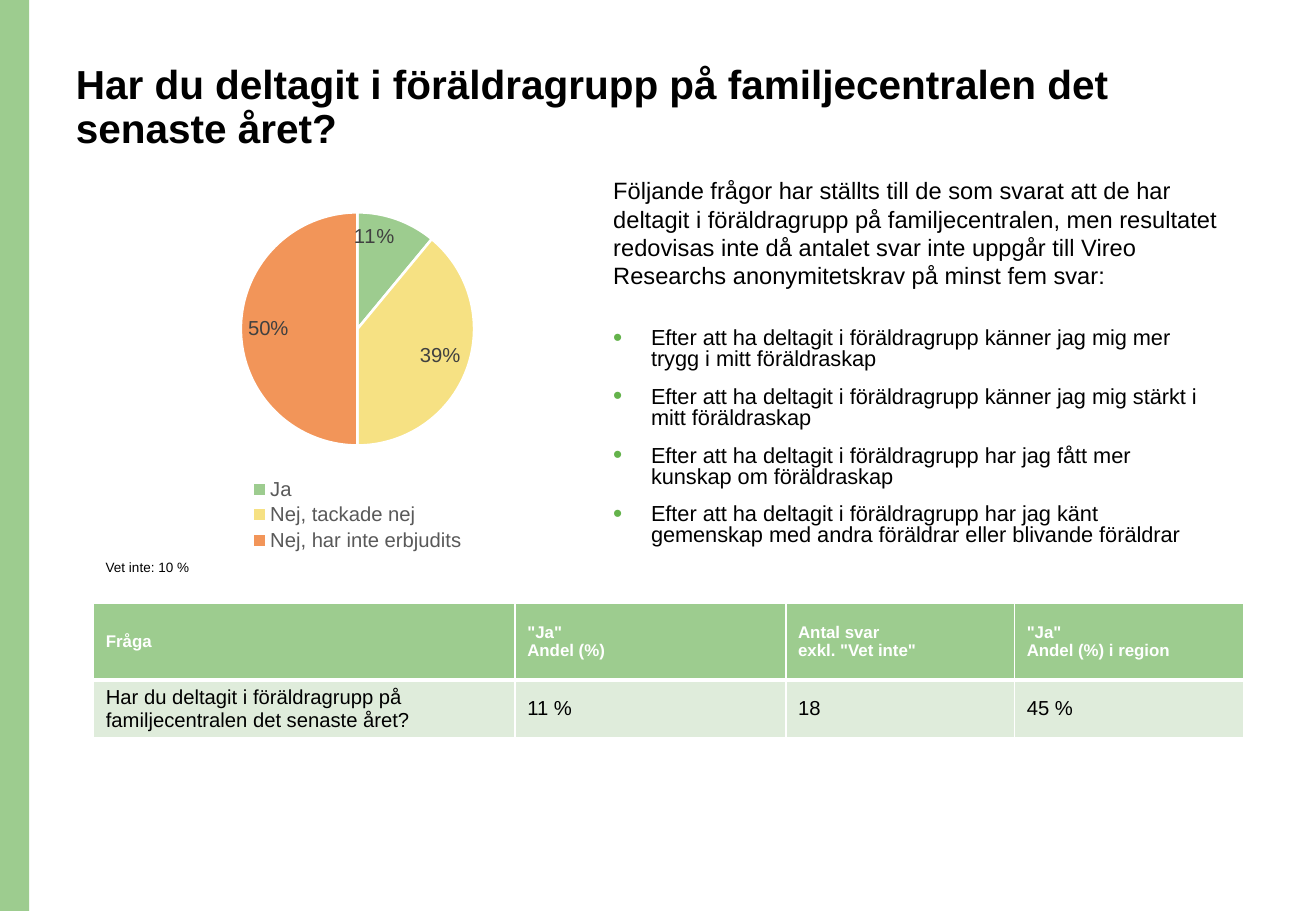
"""Build the slide on parent group attendance."""
from lxml.etree import SubElement as Sub
from pptx import Presentation
from pptx.chart.data import CategoryChartData as Data
from pptx.dml.color import RGBColor
from pptx.enum.chart import XL_CHART_TYPE as Kind
from pptx.enum.chart import XL_LABEL_POSITION as Spot
from pptx.enum.chart import XL_LEGEND_POSITION as Side
from pptx.enum.shapes import MSO_SHAPE as Form
from pptx.enum.text import MSO_ANCHOR as Anchor
from pptx.enum.text import MSO_AUTO_SIZE as Fit
from pptx.enum.text import PP_ALIGN as Align
from pptx.oxml.ns import qn
from pptx.util import Cm, Pt

GREEN, PALE, BLACK, WHITE = "9DCC8F", "DFECDB", "000000", "FFFFFF"
ASK = "Har du deltagit i föräldragrupp på familjecentralen det senaste året?"
INTRO = (
    "Följande frågor har ställts till de som svarat att de har deltagit i "
    "föräldragrupp på familjecentralen, men resultatet redovisas inte då "
    "antalet svar inte uppgår till Vireo Researchs anonymitetskrav på minst "
    "fem svar:"
)
STEM = "Efter att ha deltagit i föräldragrupp "
ENDS = [
    "känner jag mig mer trygg i mitt föräldraskap",
    "känner jag mig stärkt i mitt föräldraskap",
    "har jag fått mer kunskap om föräldraskap",
    "har jag känt gemenskap med andra föräldrar eller blivande föräldrar",
]
NOTE = "Vet inte: 10 %"
SHARES = [
    ("Ja", 0.11, GREEN),
    ("Nej, tackade nej", 0.39, "F6E183"),
    ("Nej, har inte erbjudits", 0.5, "F29559"),
]
ROWS = [
    [["Fråga"], ['"Ja"', "Andel (%)"], ["Antal svar", 'exkl. "Vet inte"'],
     ['"Ja"', "Andel (%) i region"]],
    [[ASK], ["11 %"], ["18"], ["45 %"]],
]
WIDTHS = [8.81, 5.66, 4.78, 4.78]
STYLES = [(1.6, GREEN, 10, WHITE, True, 3), (0.58, PALE, 12, BLACK, False, 1)]


def rgb(code):
    return RGBColor.from_string(code)


def style(font, size, code=BLACK, bold=False):
    font.name, font.size, font.bold = "Arial", Pt(size), bold
    font.color.rgb = rgb(code)


def paint(fill, code):
    fill.solid()
    fill.fore_color.rgb = rgb(code)


def write(frame, lines, *look):
    for i, line in enumerate(lines):
        para = frame.paragraphs[0] if i == 0 else frame.add_paragraph()
        run = para.add_run()
        run.text = line
        style(run.font, *look)
    return frame.paragraphs


def add_text(slide, box, lines, size):
    frame = slide.shapes.add_textbox(*map(Cm, box)).text_frame
    frame.word_wrap = True
    return write(frame, lines, size)


def bullet(para):
    props = para._p.get_or_add_pPr()
    props.set("marL", str(Cm(0.79)))
    props.set("indent", str(-Cm(0.79)))
    Sub(Sub(props, qn("a:buClr")), qn("a:srgbClr"), val="64B34B")
    Sub(props, qn("a:buSzPct"), val="120000")
    Sub(props, qn("a:buFont"), typeface="Arial")
    Sub(props, qn("a:buChar"), char="•")


def place(part, index, box, inner=False):
    for old in part.findall(qn("c:layout")):
        part.remove(old)
    layout = Sub(part, qn("c:layout"))
    part.insert(index, layout)
    man = Sub(layout, qn("c:manualLayout"))
    if inner:
        Sub(man, qn("c:layoutTarget"), val="inner")
    for key in "xy":
        Sub(man, qn(f"c:{key}Mode"), val="edge")
    for key, val in zip("xywh", box):
        Sub(man, qn(f"c:{key}"), val=str(val))


def border(cell, base):
    props = cell._tc.get_or_add_tcPr()
    for i, (side, width) in enumerate(zip("LRTB", (1, 1, 1, base))):
        line = Sub(props, qn(f"a:ln{side}"), w=str(Pt(width)))
        Sub(Sub(line, qn("a:solidFill")), qn("a:srgbClr"), val=WHITE)
        props.insert(i, line)


def add_pie(slide):
    data = Data(number_format="0%")
    data.categories = [name for name, _, _ in SHARES]
    data.add_series("Series 1", [val for _, val, _ in SHARES])
    box = map(Cm, (3.1, 4.06, 8.66, 7.62))
    chart = slide.shapes.add_chart(Kind.PIE, *box, data).chart
    style(chart.font, 10)
    chart.has_title = False
    chart.has_legend = True
    chart.legend.position = Side.BOTTOM
    chart.legend.include_in_layout = False
    style(chart.legend.font, 12, "595959")
    plot = chart.plots[0]
    plot.vary_by_categories = True
    for i, (_, _, code) in enumerate(SHARES):
        wedge = plot.series[0].points[i].format
        paint(wedge.fill, code)
        wedge.line.color.rgb = rgb(WHITE)
        wedge.line.width = Pt(1.5)
    plot.has_data_labels = True
    tags = plot.data_labels
    tags.show_value = True
    tags.number_format, tags.number_format_is_linked = "0%", False
    tags.position = Spot.INSIDE_END
    style(tags.font, 12, "404040")
    area = chart._chartSpace.chart.plotArea
    place(area, 0, (0.22, 0.05, 0.57, 0.64), True)
    place(chart.legend._element, 1, (0.24, 0.77, 0.53, 0.22))


def add_grid(slide):
    high = sum(look[0] for look in STYLES)
    box = map(Cm, (1.96, 12.62, sum(WIDTHS), high))
    grid = slide.shapes.add_table(len(ROWS), len(WIDTHS), *box).table
    for col, width in zip(grid.columns, WIDTHS):
        col.width = Cm(width)
    for r, (row, look) in enumerate(zip(ROWS, STYLES)):
        tall, back, size, code, bold, base = look
        grid.rows[r].height = Cm(tall)
        for c, lines in enumerate(row):
            cell = grid.cell(r, c)
            cell.vertical_anchor = Anchor.MIDDLE
            paint(cell.fill, back)
            border(cell, base)
            write(cell.text_frame, lines, size, code, bold)


def main():
    deck = Presentation()
    deck.slide_width, deck.slide_height = Cm(27.51), Cm(19.05)
    slide = deck.slides.add_slide(deck.slide_layouts[5])

    bar = slide.shapes.add_shape(Form.RECTANGLE, 0, 0, Cm(0.61), Cm(19.05))
    bar.shadow.inherit = False
    paint(bar.fill, GREEN)
    bar.line.fill.background()

    title = slide.shapes.title
    title.left, title.top, title.width, title.height = map(
        Cm, (1.33, 1.22, 23.72, 2.64))
    frame = title.text_frame
    frame.word_wrap, frame.auto_size = True, Fit.NONE
    frame.vertical_anchor = Anchor.TOP
    head = write(frame, [ASK], 24, BLACK, True)[0]
    head.alignment, head.line_spacing = Align.LEFT, 0.9

    add_pie(slide)
    add_grid(slide)
    note = add_text(slide, (1.96, 11.4, 5.33, 1.22), [NOTE], 8)[0]
    note.line_spacing = 1.5
    items = [STEM + end for end in ENDS]
    paras = add_text(slide, (12.57, 6.76, 12.78, 5.26), items, 12.9)
    for i, para in enumerate(paras):
        para.line_spacing = 0.8
        para.space_before = Pt(10 if i else 0)
        bullet(para)
    add_text(slide, (12.57, 3.56, 13.23, 2.64), [INTRO], 14)
    deck.save("out.pptx")


if __name__ == "__main__":
    main()
